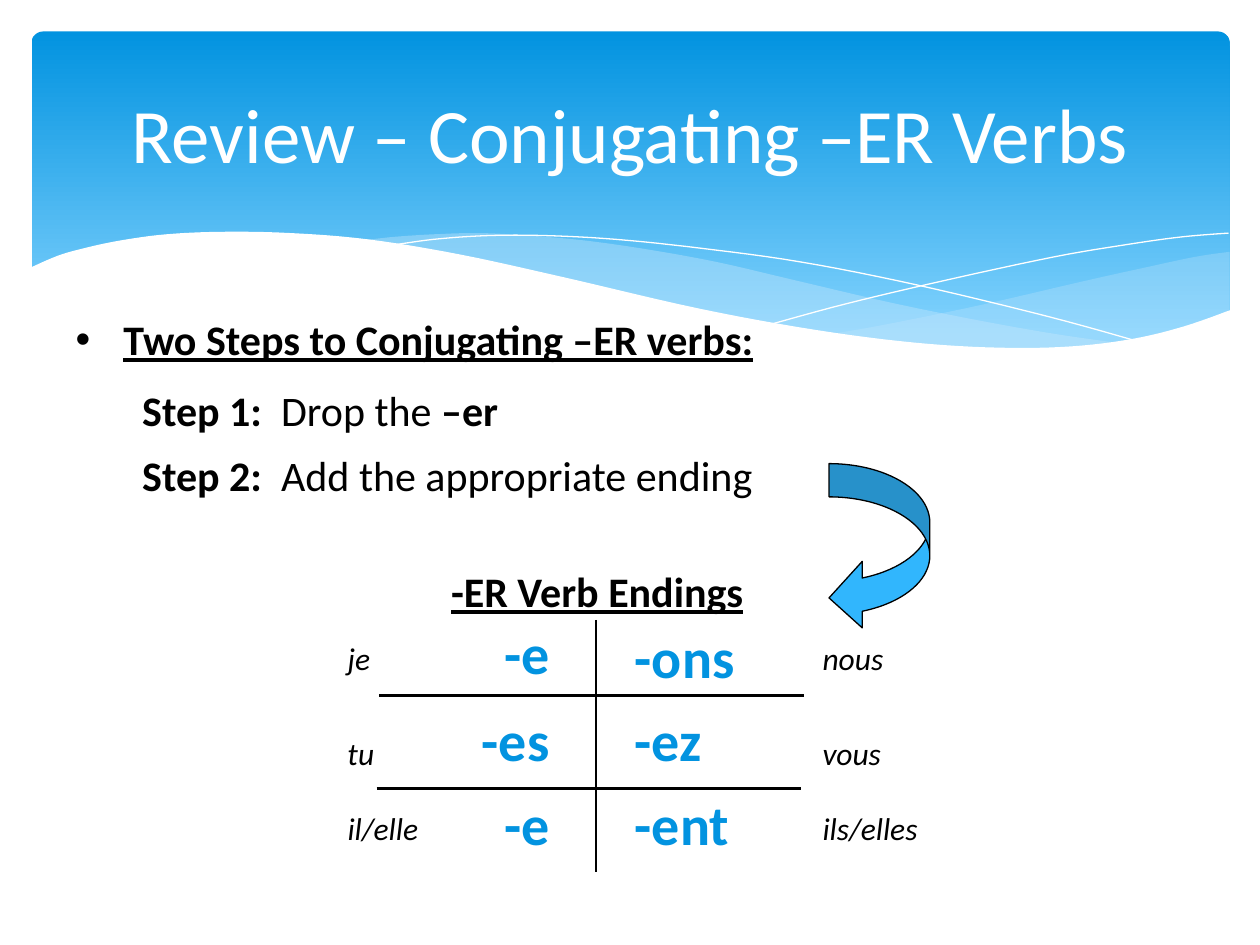
from dataclasses import dataclass

from lxml import etree
from pptx import Presentation
from pptx.dml.color import RGBColor
from pptx.enum.shapes import MSO_CONNECTOR, MSO_SHAPE
from pptx.enum.text import MSO_ANCHOR, MSO_AUTO_SIZE, PP_ALIGN
from pptx.oxml.ns import qn
from pptx.util import Emu, Inches, Pt

COLUMNS, ROWS = 100, 75
CELL = Inches(10) // COLUMNS
LEFT, CENTER, RIGHT = PP_ALIGN.LEFT, PP_ALIGN.CENTER, PP_ALIGN.RIGHT
STRAIGHT = MSO_CONNECTOR.STRAIGHT
FONT = "Calibri"
BLACK, WHITE, BLUE, SKY, MIST = "000000", "FFFFFF", "0293E0", "31B6FD", "C6E7FC"
CURVE_STEPS = 6

Point = tuple[float, float]


@dataclass
class Area:
    """A rectangle in grid columns and rows."""
    column: float
    row: float
    width: float
    height: float

    def lengths(self) -> list[Emu]:
        return [cells(n) for n in (self.column, self.row, self.width, self.height)]


@dataclass
class Wave:
    """Smooth edges joined end to end; filled ones close, the others are hairlines."""
    edges: list[list[Point]]
    fill: str | None = None
    opacity: int = 100


@dataclass
class Label:
    text: str
    area: Area


@dataclass
class Step:
    name: str
    action: str
    ending: str
    area: Area


WAVES = [
    Wave([[(97.5, 20), (94.8, 20.4), (90.6, 21.3), (86.1, 22.3), (77.9, 24.2),
           (70.6, 25.7), (66.1, 26.5)],
          [(66.1, 26.5), (70.5, 27.1), (75.7, 27.6), (80.3, 27.8), (84.4, 27.7),
           (88.1, 27.3), (91.3, 26.7), (94.2, 25.9), (97.6, 24.7)],
          [(97.6, 24.7), (97.6, 20)]], MIST, 29),
    Wave([[(89.3, 27.3), (83.7, 26.5), (77.5, 25.4), (70.6, 24), (62.9, 22.2),
           (56.9, 20.8), (51.4, 19.8), (46.5, 19.1), (42, 18.7), (38, 18.5),
           (34.4, 18.6), (31.3, 18.8), (28.6, 19.1)],
          [(28.6, 19.1), (34.2, 19.9), (40.4, 21.1), (49.1, 23.2), (56.6, 24.8),
           (63.4, 26.1), (69.5, 27), (74.8, 27.6), (79.6, 27.8), (83.8, 27.8),
           (89.3, 27.3)]], MIST, 40),
    Wave([[(30.9, 19.5), (34.4, 19), (38.7, 18.7), (43.3, 18.7), (48.9, 19),
           (55.6, 19.7), (63.6, 20.8), (72.7, 22.6), (83.1, 25.1), (90.7, 27.2)]]),
    Wave([[(61.3, 25.7), (67.2, 24.1), (74.8, 22.3), (83.6, 20.4), (89.5, 19.4),
           (93.8, 18.8), (97.5, 18.5)]]),
    Wave([[(97.7, 24.6), (94, 25.9), (89.9, 26.9), (85, 27.5), (79.3, 27.6),
           (72.6, 27.2), (64.8, 26.2), (55.5, 24.5), (44.7, 22), (36.5, 20.2),
           (29.2, 19), (23, 18.5), (17.7, 18.4), (13.2, 18.6), (9.5, 19.1),
           (6.7, 19.7), (4.6, 20.3), (2.3, 21.3)],
          [(2.3, 21.3), (2.3, 32.9)],
          [(2.3, 32.9), (97.7, 32.9)]], WHITE),
]

STEPS = [
    Step("Step 1:", "  Drop the ", "–er", Area(10.3, 30, 35.1, 5)),
    Step("Step 2:", "  Add the appropriate ending", "", Area(10.3, 35.2, 55.8, 5)),
]

SINGULAR_ENDINGS = [Label(text, Area(29.9, row, 14.7, 6.3))
                    for text, row in [("-e", 48.6), ("-es", 55.5), ("-e", 62.2)]]
PLURAL_ENDINGS = [Label(text, Area(49.4, row, 14.7, 6.3))
                  for text, row in [("-ons", 48.9), ("-ez", 55.5), ("-ent", 62.2)]]
PRONOUNS = [Label(text, Area(column, row, width, 4))
            for column, names in [
                (26.6, [("je", 3.9), ("tu", 4.4), ("il/elle", 8.5)]),
                (64.3, [("nous", 7.4), ("vous", 7.3), ("ils/elles", 10.7)])]
            for (text, width), row in zip(names, (50.25, 57.8, 63.7))]

CHART_LINES = [((47.3, 49.2), (47.3, 69.2)),
               ((30.1, 55.2), (63.8, 55.2)),
               ((29.9, 62.6), (63.6, 62.6))]


def cells(count: float) -> Emu:
    return Emu(round(count * CELL))


def color(value: str) -> RGBColor:
    return RGBColor.from_string(value)


def smooth(points: list[Point]) -> list[Point]:
    """Points along a Catmull-Rom curve through the given ones."""
    padded = [points[0], *points, points[-1]]
    curve = [points[0]]
    for a, b, c, d in zip(padded, padded[1:], padded[2:], padded[3:]):
        for step in range(1, CURVE_STEPS + 1):
            t = step / CURVE_STEPS
            curve.append(tuple(
                0.5 * (2 * q + (r - p) * t + (2 * p - 5 * q + 4 * r - s) * t ** 2
                       + (3 * q - p - 3 * r + s) * t ** 3)
                for p, q, r, s in zip(a, b, c, d)))
    return curve


def write(frame, text: str, *, size: float, ink: str = BLACK, align=LEFT,
          bold: bool = False, italic: bool = False, underline: bool = False) -> None:
    """Add a formatted span to the frame's first paragraph."""
    para = frame.paragraphs[0]
    para.alignment = align
    span = para.add_run()
    span.text = text
    font = span.font
    font.name, font.size = FONT, Pt(size)
    font.bold, font.italic, font.underline = bold, italic, underline
    font.color.rgb = color(ink)


def add_frame(page, area: Area, wrap: bool = True):
    frame = page.shapes.add_textbox(*area.lengths()).text_frame
    frame.word_wrap = wrap
    frame.auto_size = MSO_AUTO_SIZE.SHAPE_TO_FIT_TEXT
    return frame


def place(box, area: Area) -> None:
    box.left, box.top, box.width, box.height = area.lengths()


def draw_wave(page, wave: Wave) -> None:
    points = [(cells(x), cells(y)) for edge in wave.edges for x, y in smooth(edge)]
    builder = page.shapes.build_freeform(*points[0])
    builder.add_line_segments(points[1:], close=wave.fill is not None)
    shape = builder.convert_to_shape()
    shape.shadow.inherit = False
    if wave.fill is None:
        shape.fill.background()
        shape.line.color.rgb = color(WHITE)
        shape.line.width = Pt(0)
        return
    shape.line.fill.background()
    shape.fill.solid()
    shape.fill.fore_color.rgb = color(wave.fill)
    if wave.opacity < 100:
        paint = shape.fill._xPr.find(qn("a:solidFill"))[0]
        etree.SubElement(paint, qn("a:alpha")).set("val", str(wave.opacity * 1000))


def draw_banner(page) -> None:
    area = Area(2.5, 2.5, 95.1, 27)
    banner = page.shapes.add_shape(MSO_SHAPE.ROUNDED_RECTANGLE, *area.lengths())
    banner.adjustments[0] = 0.034
    banner.shadow.inherit = False
    banner.line.fill.background()
    banner.fill.gradient()
    banner.fill.gradient_angle = 270
    for stop, (position, value) in zip(banner.fill.gradient_stops,
                                       [(0, BLUE), (0.9, "83D3FE")]):
        stop.position = position
        stop.color.rgb = color(value)
    for wave in WAVES:
        draw_wave(page, wave)


def fill_placeholders(page) -> None:
    title, body = page.shapes.title, page.placeholders[1]
    for box in (title, body):
        page.shapes._spTree.append(box._element)
        box.text_frame.auto_size = MSO_AUTO_SIZE.NONE
    place(title, Area(5, 3.7, 90, 13.7))
    title.text_frame.vertical_anchor = MSO_ANCHOR.MIDDLE
    write(title.text_frame, "Review – Conjugating –ER Verbs",
          size=44, ink=WHITE, align=CENTER)
    place(body, Area(5, 24.4, 90, 7.3))
    write(body.text_frame, "Two Steps to Conjugating –ER verbs:",
          size=24, bold=True, underline=True)
    properties = body.text_frame.paragraphs[0]._p.get_or_add_pPr()
    properties.set("marL", str(cells(3.8)))
    properties.set("indent", str(cells(-3.8)))


def draw_step(page, step: Step) -> None:
    frame = add_frame(page, step.area, wrap=False)
    write(frame, step.name, size=24, bold=True)
    write(frame, step.action, size=24)
    if step.ending:
        write(frame, step.ending, size=24, bold=True)


def draw_line(page, start: Point, end: Point) -> None:
    line = page.shapes.add_connector(STRAIGHT, *map(cells, (*start, *end)))
    line.line.color.rgb = color(BLACK)
    line.line.width = Pt(1.5)
    etree.SubElement(line._element.spPr, qn("a:effectLst"))


def draw_arrow(page) -> None:
    area = Area(65.8, 36.8, 8, 13.3)
    arrow = page.shapes.add_shape(MSO_SHAPE.CURVED_LEFT_ARROW, *area.lengths())
    for index, share in enumerate((0.33, 0.66, 0.33)):
        arrow.adjustments[index] = share
    arrow.shadow.inherit = False
    arrow.fill.solid()
    arrow.fill.fore_color.rgb = color(SKY)
    arrow.line.color.rgb = color(BLACK)
    arrow.line.width = Pt(0.75)


def main() -> None:
    deck = Presentation()
    deck.slide_width, deck.slide_height = cells(COLUMNS), cells(ROWS)
    page = deck.slides.add_slide(deck.slide_layouts[1])
    draw_banner(page)
    fill_placeholders(page)
    for step in STEPS:
        draw_step(page, step)
    for start, end in CHART_LINES:
        draw_line(page, start, end)
    write(add_frame(page, Area(30.8, 44.4, 33.2, 5)), "-ER Verb Endings",
          size=24, bold=True, underline=True, align=CENTER)
    draw_arrow(page)
    for labels, align in ((SINGULAR_ENDINGS, RIGHT), (PLURAL_ENDINGS, LEFT)):
        for label in labels:
            write(add_frame(page, label.area), label.text,
                  size=32, ink=BLUE, bold=True, align=align)
    for label in PRONOUNS:
        write(add_frame(page, label.area, wrap=False), label.text, size=18, italic=True)
    deck.save("out.pptx")


if __name__ == "__main__":
    main()
